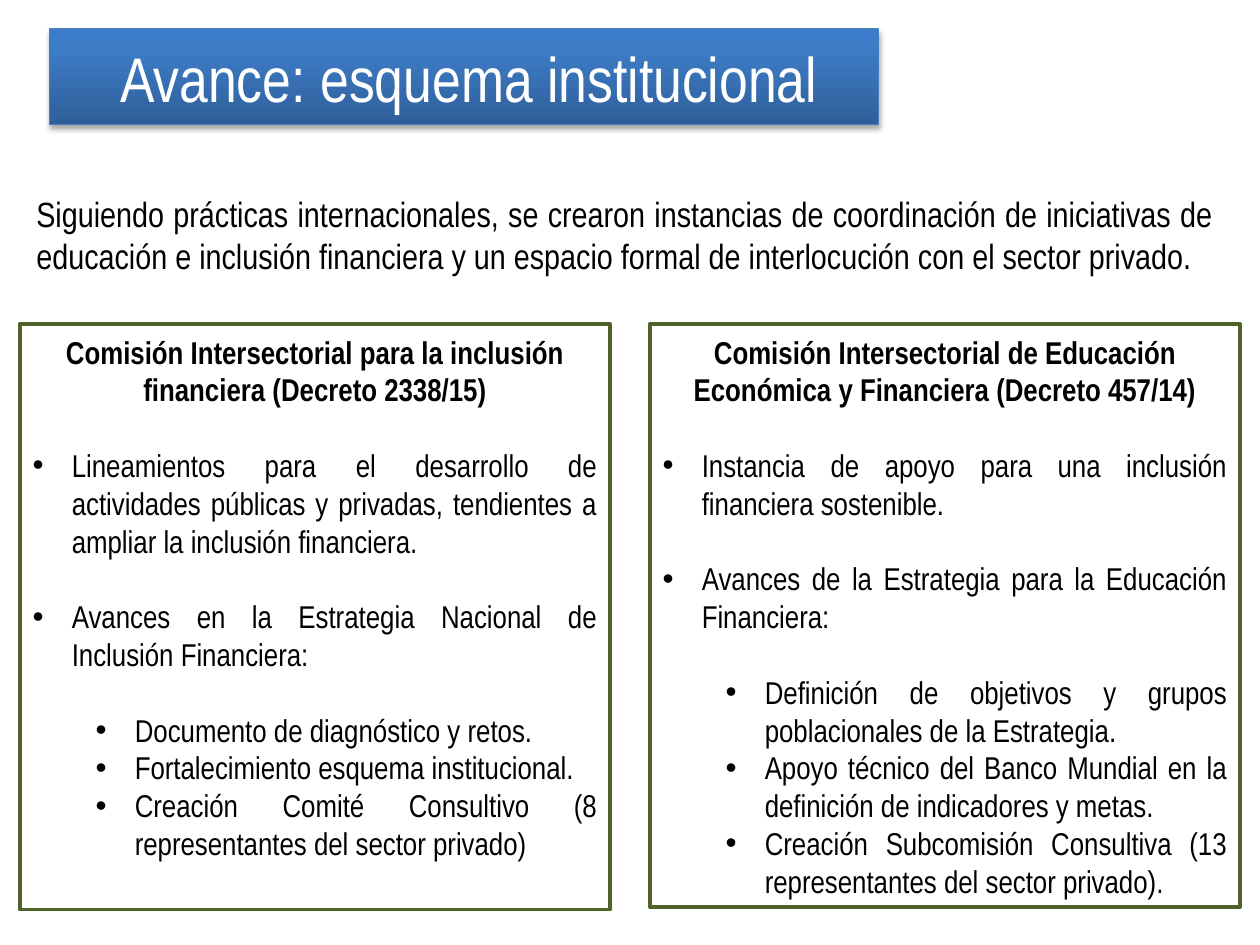
from dataclasses import dataclass
from typing import Any

from lxml.etree import SubElement
from pptx import Presentation
from pptx.dml.color import RGBColor
from pptx.enum.text import MSO_ANCHOR, MSO_AUTO_SIZE, PP_ALIGN
from pptx.oxml import parse_xml
from pptx.oxml.ns import nsdecls, qn
from pptx.util import Inches, Pt

COLS, ROWS = 100, 75
WIDE, HIGH = Inches(10), Inches(7.5)


@dataclass(frozen=True)
class Theme:
    face: str = "Arial Narrow"
    ink: str = "000000"
    pale: str = "FFFFFF"
    frame: str = "4F6228"
    edge: str = "4B7EBC"
    fade: tuple = ((0, "2F5F99"), (80, "3D7CC7"), (100, "3A7CCB"))
    head: int = 36
    lead: int = 20
    body: int = 18
    gap: float = 21.6


@dataclass(frozen=True)
class Area:
    col: float
    row: float
    wide: float
    high: float


@dataclass(frozen=True)
class Item:
    text: str
    level: int = 0
    gap: bool = False


@dataclass(frozen=True)
class Panel:
    area: Area
    head: str
    items: tuple[Item, ...]


THEME = Theme()
BANNER = Area(3.9, 2.3, 65.8, 7.6)
INTRO = Area(1.9, 14.8, 95.4, 7.7)
LEAD = (
    "Siguiendo prácticas internacionales, se crearon instancias de coordinación "
    "de iniciativas de educación e inclusión financiera y un espacio formal de "
    "interlocución con el sector privado."
)
PANELS = (
    Panel(
        Area(1.6, 25.7, 46.8, 46.5),
        "Comisión Intersectorial para la inclusión financiera (Decreto 2338/15)",
        (
            Item("Lineamientos para el desarrollo de actividades públicas y privadas, "
                 "tendientes a ampliar la inclusión financiera.", gap=True),
            Item("Avances en la Estrategia Nacional de Inclusión Financiera:", gap=True),
            Item("Documento de diagnóstico y retos.", 1, True),
            Item("Fortalecimiento esquema institucional.", 1),
            Item("Creación Comité Consultivo (8 representantes del sector privado)", 1),
        ),
    ),
    Panel(
        Area(51.6, 25.7, 46.8, 46.3),
        "Comisión Intersectorial de Educación Económica y Financiera (Decreto 457/14)",
        (
            Item("Instancia de apoyo para una inclusión financiera sostenible.", gap=True),
            Item("Avances de la Estrategia para la Educación Financiera:", gap=True),
            Item("Definición de objetivos y grupos poblacionales de la Estrategia.", 1, True),
            Item("Apoyo técnico del Banco Mundial en la definición de indicadores y metas.", 1),
            Item("Creación Subcomisión Consultiva (13 representantes del sector privado).", 1),
        ),
    ),
)


def apply(target: Any, **form: Any) -> None:
    for name, value in form.items():
        setattr(target, name, value)


def place(shape: Any, area: Area) -> None:
    apply(
        shape,
        left=round(WIDE * area.col / COLS),
        top=round(HIGH * area.row / ROWS),
        width=round(WIDE * area.wide / COLS),
        height=round(HIGH * area.high / ROWS),
    )


def outline(shape: Any, tint: str, width: float) -> None:
    shape.line.color.rgb = RGBColor.from_string(tint)
    shape.line.width = Pt(width)


def frame(shape: Any, anchor: MSO_ANCHOR, top: float = 0.05, left: float = 0.1) -> None:
    """Set wrapping, anchor and margins of the text."""
    apply(
        shape.text_frame,
        word_wrap=True,
        auto_size=MSO_AUTO_SIZE.NONE,
        vertical_anchor=anchor,
        margin_left=Inches(left),
        margin_right=Inches(0.1),
        margin_top=Inches(top),
        margin_bottom=Inches(0.05),
    )


def write(para: Any, text: str, size: int, tint: str, align: PP_ALIGN,
          bold: bool = False, before: float = 0) -> None:
    apply(para, alignment=align, space_before=Pt(before), space_after=Pt(0))
    run = para.add_run()
    run.text = text
    apply(run.font, name=THEME.face, size=Pt(size), bold=bold)
    run.font.color.rgb = RGBColor.from_string(tint)


def indent(para: Any, left: float, hang: float, mark: str = "") -> None:
    props = para._p.get_or_add_pPr()
    props.set("marL", str(Inches(left)))
    props.set("indent", str(Inches(-hang)))
    if mark:
        SubElement(props, qn("a:buFont")).set("typeface", "Arial")
        SubElement(props, qn("a:buChar")).set("char", mark)
    else:
        SubElement(props, qn("a:buNone"))


def banner(shape: Any) -> None:
    place(shape, BANNER)
    stops = "".join(
        f'<a:gs pos="{pos * 1000}"><a:srgbClr val="{tint}"/></a:gs>'
        for pos, tint in THEME.fade
    )
    props = shape._element.spPr
    props.append(parse_xml(
        f'<a:gradFill {nsdecls("a")} rotWithShape="1"><a:gsLst>{stops}</a:gsLst>'
        '<a:lin ang="16200000" scaled="0"/></a:gradFill>'
    ))
    outline(shape, THEME.edge, 0.75)
    props.append(parse_xml(
        f'<a:effectLst {nsdecls("a")}><a:outerShdw blurRad="{Pt(3.1)}" '
        f'dist="{Pt(1.8)}" dir="5400000" rotWithShape="0"><a:srgbClr val="{THEME.ink}">'
        '<a:alpha val="35000"/></a:srgbClr></a:outerShdw></a:effectLst>'
    ))
    frame(shape, MSO_ANCHOR.MIDDLE, left=0.18)
    write(shape.text_frame.paragraphs[0], "Avance: esquema institucional",
          THEME.head, THEME.pale, PP_ALIGN.CENTER)


def intro(shape: Any) -> None:
    place(shape, INTRO)
    frame(shape, MSO_ANCHOR.TOP)
    write(shape.text_frame.paragraphs[0], LEAD, THEME.lead, THEME.ink, PP_ALIGN.JUSTIFY)


def fill(shape: Any, panel: Panel) -> None:
    place(shape, panel.area)
    outline(shape, THEME.frame, 2)
    frame(shape, MSO_ANCHOR.TOP, top=0.07)
    head = shape.text_frame.paragraphs[0]
    indent(head, 0, 0)
    write(head, panel.head, THEME.body, THEME.ink, PP_ALIGN.CENTER, bold=True)
    for item in panel.items:
        para = shape.text_frame.add_paragraph()
        para.level = item.level
        indent(para, 0.31 + 0.5 * item.level, 0.31, "•")
        write(para, item.text, THEME.body, THEME.ink, PP_ALIGN.JUSTIFY,
              before=THEME.gap if item.gap else 0)


def main() -> None:
    deck = Presentation()
    apply(deck, slide_width=WIDE, slide_height=HIGH)
    slide = deck.slides.add_slide(deck.slide_layouts[3])
    title, *bodies = slide.placeholders
    banner(title)
    for body, panel in zip(bodies, PANELS):
        fill(body, panel)
    intro(slide.shapes.add_textbox(0, 0, WIDE, HIGH))
    deck.save("out.pptx")


if __name__ == "__main__":
    main()
